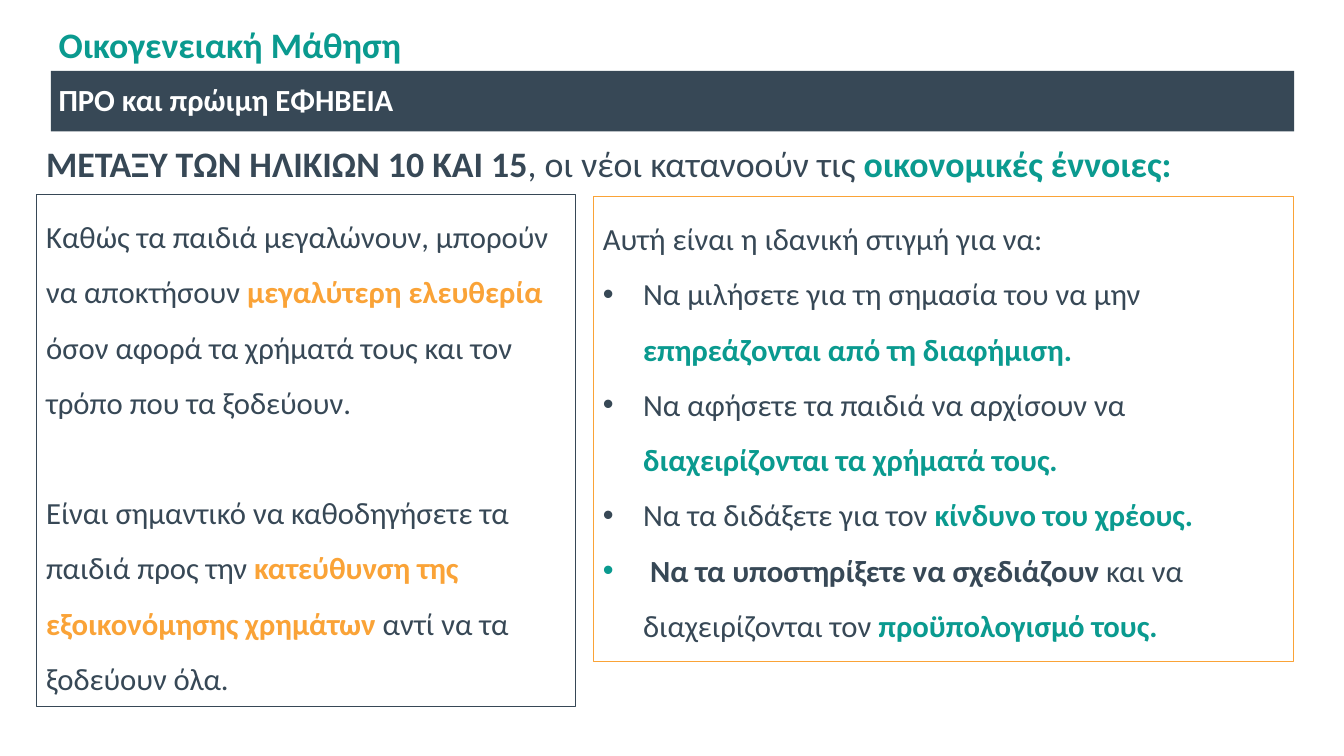
"""Build the slide on family learning in early adolescence."""
from dataclasses import dataclass
from typing import Optional

from lxml.etree import SubElement
from pptx import Presentation
from pptx.dml.color import RGBColor
from pptx.enum.shapes import MSO_SHAPE as Shape
from pptx.enum.text import MSO_ANCHOR as Anchor, PP_ALIGN as Align
from pptx.oxml.ns import qn
from pptx.util import Pt

SCALE = 9525
FONT = "Calibri"
NAVY, TEAL, AMBER, WHITE = "374856", "0A9A8F", "FAA337", "FFFFFF"


@dataclass
class Run:
    text: str
    ink: str = NAVY
    bold: bool = False


@dataclass
class Para:
    runs: list[Run]
    dot: Optional[str] = None
    gap: int = 0


@dataclass
class Box:
    left: int
    top: int
    width: int
    height: int
    paras: list[Para]
    size: int = 24
    space: float = 1.5
    pad: int = 10
    anchor: Anchor = Anchor.TOP
    align: Align = Align.LEFT
    fill: Optional[str] = None
    line: Optional[str] = None


BOXES = [
    Box(53, 74, 1295, 63, [Para([Run("ΠΡΟ και πρώιμη ΕΦΗΒΕΙΑ", WHITE, True)])],
        space=0.9, pad=8, anchor=Anchor.MIDDLE, align=Align.JUSTIFY, fill=NAVY),
    Box(53, 11, 1294, 76, [Para([Run("Οικογενειακή Μάθηση", TEAL, True)])],
        size=28, space=0.9, pad=8, anchor=Anchor.MIDDLE),
    Box(38, 120, 1294, 78, [Para([
        Run("ΜΕΤΑΞΥ ΤΩΝ ΗΛΙΚΙΩΝ 10 ΚΑΙ 15", bold=True),
        Run(", οι νέοι κατανοούν τις "),
        Run("οικονομικές έννοιες:", TEAL, True)])], size=28),
    Box(38, 203, 561, 533, [
        Para([Run("Καθώς τα παιδιά μεγαλώνουν, μπορούν να αποκτήσουν "),
              Run("μεγαλύτερη ελευθερία", AMBER, True),
              Run(" όσον αφορά τα χρήματά τους και τον τρόπο που τα ξοδεύουν.")]),
        Para([Run("Είναι σημαντικό να καθοδηγήσετε τα παιδιά προς την "),
              Run("κατεύθυνση της εξοικονόμησης χρημάτων", AMBER, True),
              Run(" αντί να τα ξοδεύουν όλα.")], gap=43),
    ], line=NAVY),
    Box(618, 205, 729, 485, [
        Para([Run("Αυτή είναι η ιδανική στιγμή για να:")]),
        Para([Run("Να μιλήσετε για τη σημασία του να μην"),
              Run(" επηρεάζονται από τη διαφήμιση.", TEAL, True)], NAVY),
        Para([Run("Να αφήσετε τα παιδιά να αρχίσουν να "),
              Run("διαχειρίζονται τα χρήματά τους.", TEAL, True)], NAVY),
        Para([Run("Να τα διδάξετε για τον "),
              Run("κίνδυνο του χρέους.", TEAL, True)], NAVY),
        Para([Run(" Να τα υποστηρίξετε να σχεδιάζουν ", bold=True),
              Run("και να διαχειρίζονται τον "),
              Run("προϋπολογισμό τους.", TEAL, True)], TEAL),
    ], line=AMBER),
]


def px(count: int) -> int:
    """Turn px into EMU."""
    return count * SCALE


def rgb(ink: str) -> RGBColor:
    """Turn a hex string into a colour."""
    return RGBColor.from_string(ink)


def add_dot(par, ink: str) -> None:
    """Give a paragraph a hanging bullet."""
    props = par._p.get_or_add_pPr()
    props.set("marL", str(px(42)))
    props.set("indent", str(px(-42)))
    SubElement(SubElement(props, qn("a:buClr")), qn("a:srgbClr")).set("val", ink)
    SubElement(props, qn("a:buFont")).set("typeface", "Arial")
    SubElement(props, qn("a:buChar")).set("char", "•")


def write(par, para: Para, box: Box) -> None:
    """Fill a paragraph with its runs."""
    if para.dot:
        add_dot(par, para.dot)
    par.alignment = box.align
    par.line_spacing = box.space
    if para.gap:
        par.space_before = Pt(para.gap)
    base = para.runs[0]
    font = par.font
    font.name, font.size, font.bold = FONT, Pt(box.size), base.bold
    font.color.rgb = rgb(base.ink)
    for item in para.runs:
        run = par.add_run()
        run.text = item.text
        if item.bold != base.bold:
            run.font.bold = item.bold
        if item.ink != base.ink:
            run.font.color.rgb = rgb(item.ink)


def draw(shapes, box: Box) -> None:
    """Draw a box and its text."""
    place = [px(n) for n in (box.left, box.top, box.width, box.height)]
    if box.fill or box.line:
        shape = shapes.add_shape(Shape.RECTANGLE, *place)
        shape.shadow.inherit = False
    else:
        shape = shapes.add_textbox(*place)
    if box.fill:
        shape.fill.solid()
        shape.fill.fore_color.rgb = rgb(box.fill)
    else:
        shape.fill.background()
    if box.line:
        shape.line.color.rgb = rgb(box.line)
        shape.line.width = Pt(0.75)
    else:
        shape.line.fill.background()
    frame = shape.text_frame
    frame.word_wrap = True
    frame.vertical_anchor = box.anchor
    frame.margin_left = frame.margin_right = px(box.pad)
    frame.margin_top = frame.margin_bottom = px(5)
    for i, para in enumerate(box.paras):
        write(frame.add_paragraph() if i else frame.paragraphs[0], para, box)


def main() -> None:
    """Build and save the slide."""
    deck = Presentation()
    deck.slide_width, deck.slide_height = px(1400), px(788)
    slide = deck.slides.add_slide(deck.slide_layouts[6])
    for box in BOXES:
        draw(slide.shapes, box)
    deck.save("out.pptx")


if __name__ == "__main__":
    main()
